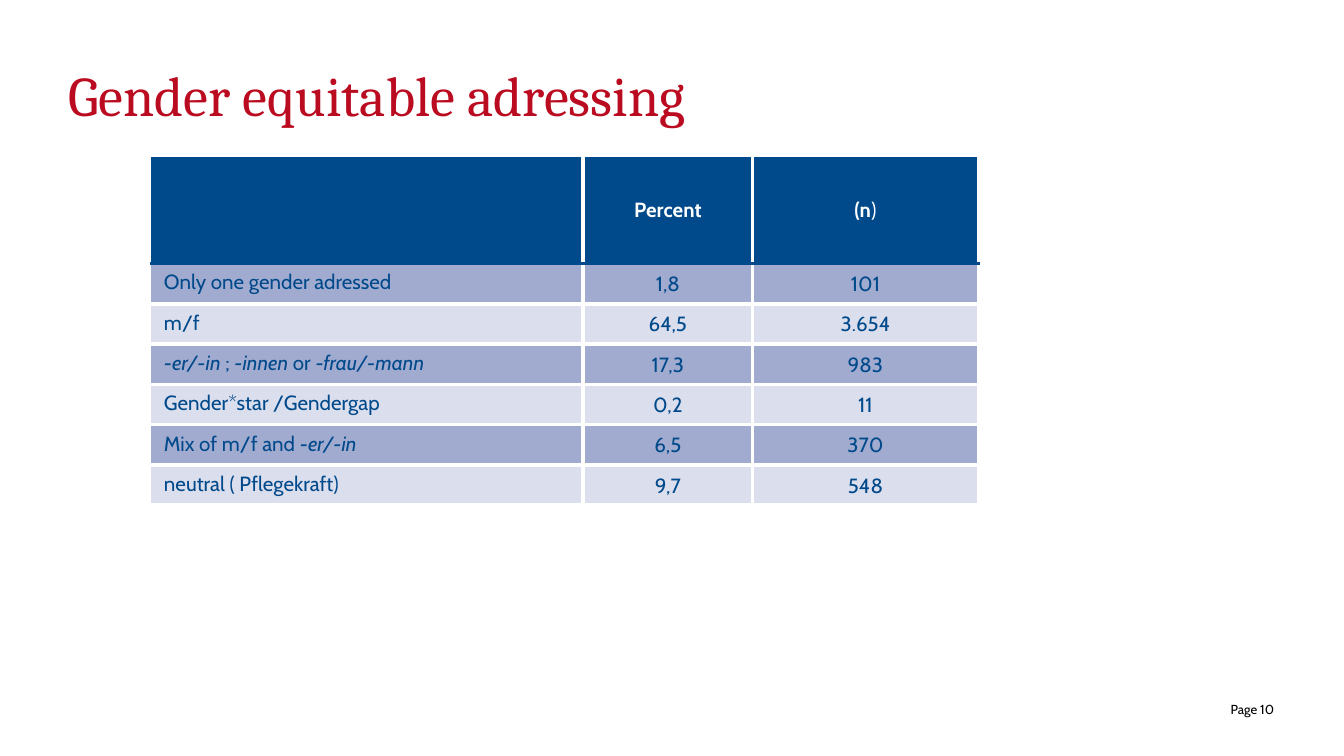
import pptx
import pptx.dml.color
import pptx.enum.text
import pptx.oxml.ns
import pptx.util
from dataclasses import dataclass
from lxml import etree

ALIGN = pptx.enum.text.PP_ALIGN
ANCHOR = pptx.enum.text.MSO_ANCHOR


@dataclass(frozen=True)
class Theme:
    red: str = "BB0B20"
    blue: str = "00498B"
    dark_band: str = "A1ABCF"
    light_band: str = "DBDEED"
    white: str = "FFFFFF"
    black: str = "000000"
    serif: str = "Cambria"
    sans: str = "Cabin"
    title_size: int = 30
    table_size: int = 11
    page_size: int = 7
    line_spacing: int = 14
    gap_width: float = 2.25
    rule_width: float = 1.5


THEME = Theme()
CELLS_PER_INCH = 10
SLIDE_COLUMNS, SLIDE_ROWS = 100, 56.25
COLUMN_WIDTHS = [32.2, 12.6, 16.8]
HEADER_HEIGHT, ROW_HEIGHT = 8, 3

HEADER = ["", [("Percent", {"bold": True})], [("(n", {"bold": True}), (")", {"bold": False})]]
ITALIC = {"italic": True}
ROWS = [
    ("Only one gender adressed", "1,8", "101"),
    ("m/f", "64,5", "3.654"),
    ([("-er/-in", ITALIC), (" ; ", {}), ("-innen ", ITALIC), ("or ", {}),
      ("-frau/-mann", ITALIC)], "17,3", "983"),
    ("Gender*star /Gendergap", "0,2", "11"),
    ([("Mix of m/f and ", {}), ("-er/-in", ITALIC)], "6,5", "370"),
    ("neutral ( Pflegekraft)", "9,7", "548"),
]


def grid(count):
    return pptx.util.Inches(count / CELLS_PER_INCH)


def apply_format(target, values):
    for name, value in values.items():
        setattr(target, name, value)


def write_spans(para, content, face, size, color):
    spans = [(content, {})] if isinstance(content, str) else content
    for text, emphasis in spans:
        if text:
            span = para.add_run()
            span.text = text
            apply_format(span.font, {"name": face, "size": pptx.util.Pt(size), **emphasis})
            span.font.color.rgb = pptx.dml.color.RGBColor.from_string(color)


def add_text(page, area, content, face, size, color, align=ALIGN.LEFT, top_margin=0):
    box = page.shapes.add_textbox(*map(grid, area))
    apply_format(box.text_frame, {
        "word_wrap": True, "vertical_anchor": ANCHOR.TOP,
        "margin_left": 0, "margin_right": 0,
        "margin_top": grid(top_margin), "margin_bottom": 0,
    })
    para = box.text_frame.paragraphs[0]
    para.alignment = align
    write_spans(para, content, face, size, color)


def add_border(cell, side, color, width):
    properties = cell._tc.get_or_add_tcPr()
    line = etree.SubElement(properties, pptx.oxml.ns.qn(f"a:ln{side}"),
                            w=str(pptx.util.Pt(width)))
    fill = etree.SubElement(line, pptx.oxml.ns.qn("a:solidFill"))
    etree.SubElement(fill, pptx.oxml.ns.qn("a:srgbClr"), val=color)


def cell_borders(row, column):
    gap = (THEME.white, THEME.gap_width)
    rule = (THEME.blue, THEME.rule_width)
    borders = {"L": gap} if column else {}
    borders["R"] = gap
    if row:
        borders["T"] = rule if row == 1 else gap
    borders["B"] = gap if row else rule
    return borders


def fill_cell(cell, row, column, content):
    for side, (color, width) in cell_borders(row, column).items():
        add_border(cell, side, color, width)
    band = THEME.dark_band if row % 2 else THEME.light_band
    cell.fill.solid()
    cell.fill.fore_color.rgb = pptx.dml.color.RGBColor.from_string(band if row else THEME.blue)
    apply_format(cell, {
        "margin_left": 0, "margin_right": 0,
        "margin_top": grid(0.4), "margin_bottom": grid(0.4),
        "vertical_anchor": ANCHOR.MIDDLE if column else ANCHOR.TOP,
    })
    para = cell.text_frame.paragraphs[0]
    apply_format(para, {
        "alignment": ALIGN.CENTER if column else ALIGN.LEFT,
        "line_spacing": pptx.util.Pt(THEME.line_spacing),
    })
    if not column:
        para._p.get_or_add_pPr().set("marL", str(grid(1)))
    write_spans(para, content, THEME.sans, THEME.table_size,
                THEME.blue if row else THEME.white)


def add_results_table(page, left, top):
    contents = [HEADER, *ROWS]
    heights = [HEADER_HEIGHT] + [ROW_HEIGHT] * len(ROWS)
    table = page.shapes.add_table(len(contents), len(COLUMN_WIDTHS), grid(left), grid(top),
                                  grid(sum(COLUMN_WIDTHS)), grid(sum(heights))).table
    for column, width in zip(table.columns, COLUMN_WIDTHS):
        column.width = grid(width)
    for row, height in zip(table.rows, heights):
        row.height = grid(height)
    for row, values in enumerate(contents):
        for column, content in enumerate(values):
            fill_cell(table.cell(row, column), row, column, content)


def main():
    deck = pptx.Presentation()
    apply_format(deck, {"slide_width": grid(SLIDE_COLUMNS), "slide_height": grid(SLIDE_ROWS)})
    page = deck.slides.add_slide(deck.slide_layouts[6])
    add_text(page, (84.8, 51.7, 10, 1.6), "Page 10", THEME.sans, THEME.page_size,
             THEME.black, ALIGN.RIGHT, 0.5)
    add_text(page, (5.1, 4.5, 89.8, 9.4), "Gender equitable adressing", THEME.serif,
             THEME.title_size, THEME.red)
    add_results_table(page, 11.2, 11.6)
    deck.save("out.pptx")


if __name__ == "__main__":
    main()
